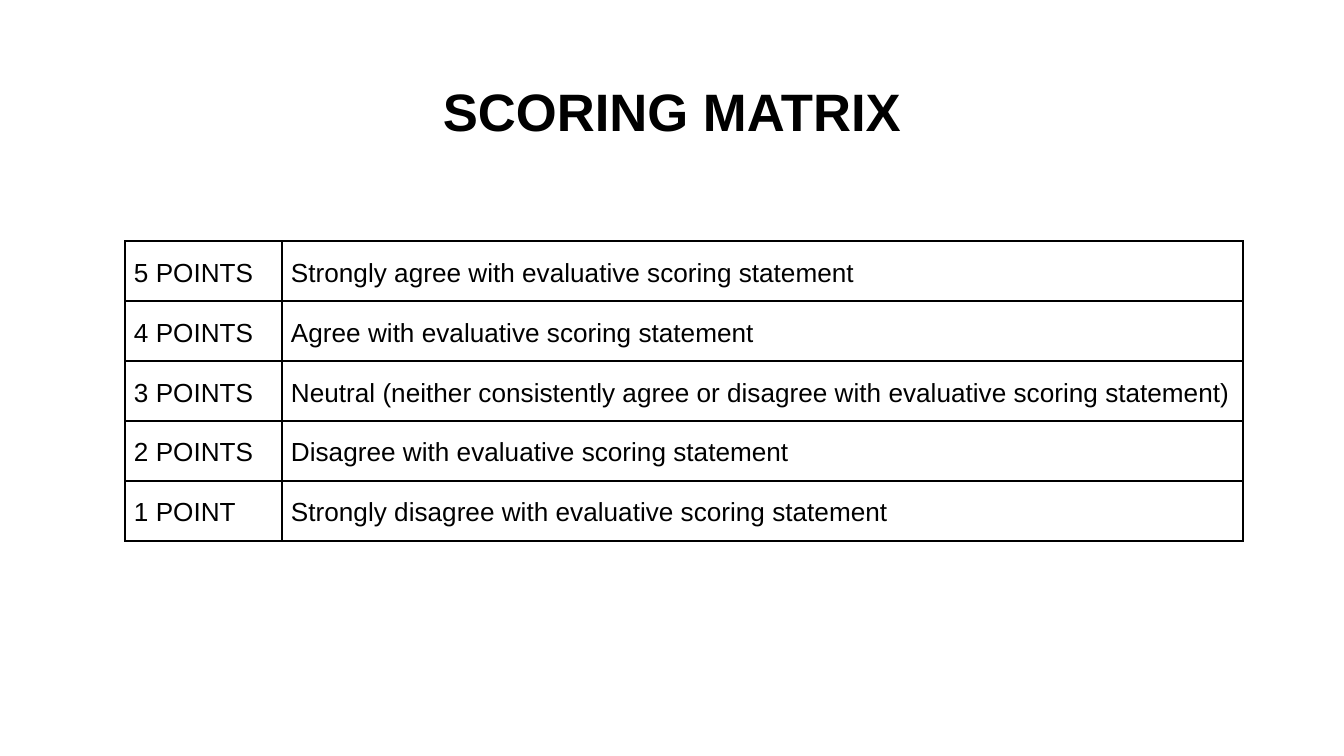
from dataclasses import dataclass
from lxml.etree import SubElement
from pptx import Presentation
from pptx.dml.color import RGBColor
from pptx.enum.text import MSO_ANCHOR, MSO_AUTO_SIZE, PP_ALIGN
from pptx.oxml.ns import qn
from pptx.util import Pt

SCALE = 914400 / 134.4


@dataclass(frozen=True)
class Theme:
    font: str = "Arial"
    ink: str = "000000"
    paper: str = "FFFFFF"
    head: float = 28.2
    body: float = 14
    rule: float = 1


THEME = Theme()
SCORES = [
    ("5 POINTS", "Strongly agree with evaluative scoring statement"),
    ("4 POINTS", "Agree with evaluative scoring statement"),
    ("3 POINTS", "Neutral (neither consistently agree or disagree with evaluative scoring statement)"),
    ("2 POINTS", "Disagree with evaluative scoring statement"),
    ("1 POINT", "Strongly disagree with evaluative scoring statement"),
]


def px(size):
    return round(size * SCALE)


def style(para, size, bold=False):
    font = para.font
    font.name = THEME.font
    font.size = Pt(size)
    font.bold = bold
    font.color.rgb = RGBColor.from_string(THEME.ink)


def border(cell):
    props = cell._tc.get_or_add_tcPr()
    for index, side in enumerate(("lnL", "lnR", "lnT", "lnB")):
        line = props.makeelement(qn(f"a:{side}"), {"w": str(Pt(THEME.rule))})
        fill = SubElement(line, qn("a:solidFill"))
        SubElement(fill, qn("a:srgbClr"), val=THEME.ink)
        props.insert(index, line)


def add_title(slide, box, text):
    title = slide.shapes.title
    title.left, title.top, title.width, title.height = map(px, box)
    frame = title.text_frame
    frame.text = text
    frame.word_wrap = True
    frame.auto_size = MSO_AUTO_SIZE.NONE
    frame.vertical_anchor = MSO_ANCHOR.TOP
    frame.margin_left = frame.margin_right = px(13)
    frame.margin_top = frame.margin_bottom = px(13)
    para = frame.paragraphs[0]
    para.alignment = PP_ALIGN.CENTER
    style(para, THEME.head, bold=True)


def fill_cell(cell, text):
    cell.text = text
    cell.fill.solid()
    cell.fill.fore_color.rgb = RGBColor.from_string(THEME.paper)
    cell.margin_left = cell.margin_right = px(9)
    cell.margin_top = cell.margin_bottom = px(13)
    para = cell.text_frame.paragraphs[0]
    para.line_spacing = 1.15
    style(para, THEME.body)
    border(cell)


def add_matrix(slide, box, label, scores):
    left, top, width, height = box
    table = slide.shapes.add_table(len(scores), 2, *map(px, box)).table
    table.first_row = False
    table.horz_banding = False
    table.columns[0].width = px(label)
    table.columns[1].width = px(width - label)
    for row, texts in zip(table.rows, scores):
        row.height = px(height / len(scores))
        for cell, text in zip(row.cells, texts):
            fill_cell(cell, text)


def main():
    deck = Presentation()
    deck.slide_width, deck.slide_height = px(1344), px(756)
    slide = deck.slides.add_slide(deck.slide_layouts[5])
    add_title(slide, (46, 66, 1252, 85), "SCORING MATRIX")
    add_matrix(slide, (125, 241, 1118, 300), 157, SCORES)
    deck.save("out.pptx")


if __name__ == "__main__":
    main()
